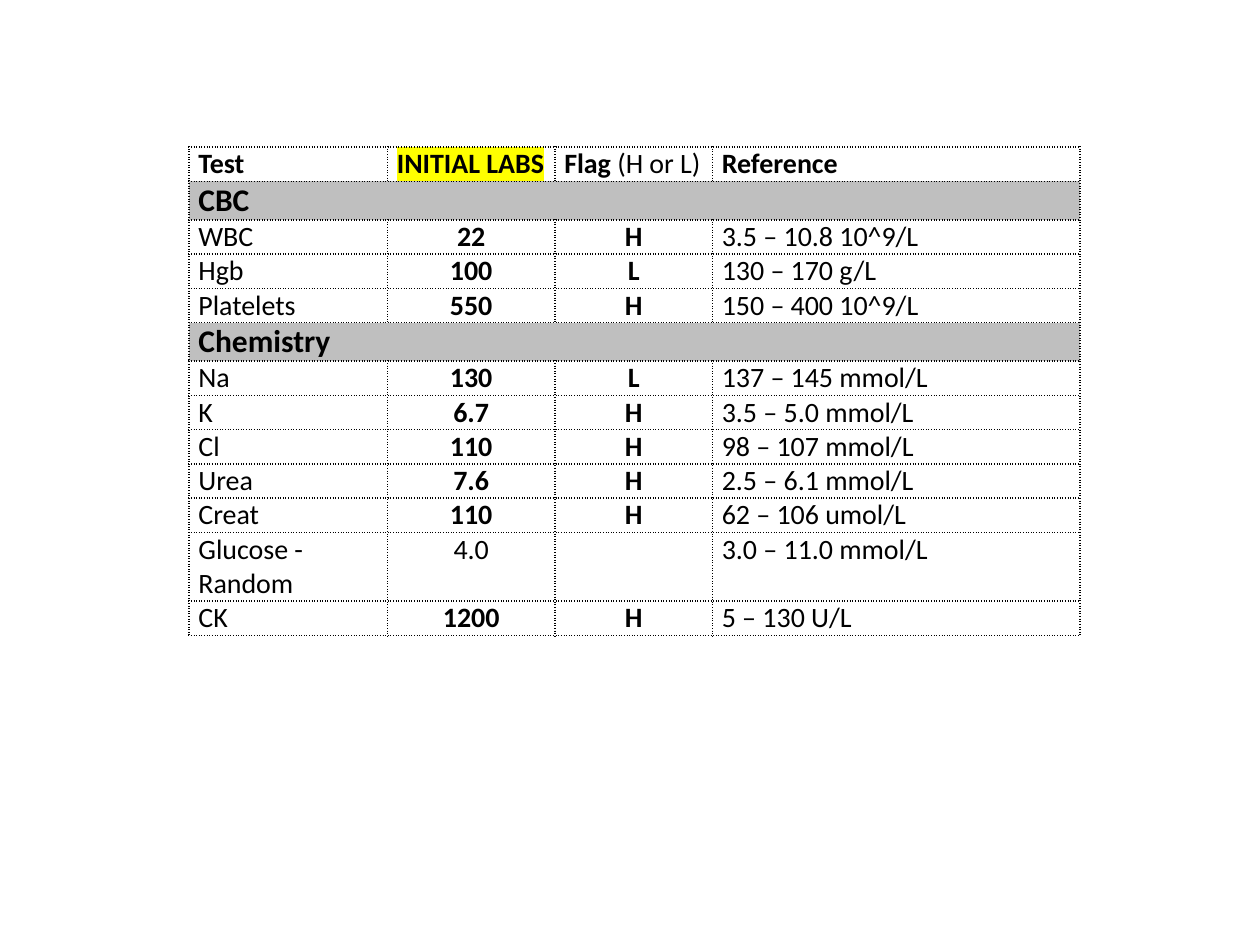
"""Build a one-slide deck with a table of initial laboratory results."""
from dataclasses import dataclass

import lxml.etree
import pptx
import pptx.dml.color
import pptx.enum.text
import pptx.oxml.ns
import pptx.util

Pt = pptx.util.Pt
RGBColor = pptx.dml.color.RGBColor
ALIGN = pptx.enum.text.PP_ALIGN
qn = pptx.oxml.ns.qn

BLACK = RGBColor(0x00, 0x00, 0x00)
WHITE = RGBColor(0xFF, 0xFF, 0xFF)
GREY = RGBColor(0xBF, 0xBF, 0xBF)
YELLOW = RGBColor(0xFF, 0xFF, 0x00)

FONT = "Calibri"
LEFT, TOP = 108, 84
COLUMN_WIDTHS = (113.4, 95.7, 90, 210)
LINE_HEIGHT, SECTION_HEIGHT = 19.5, 22
BODY_SIZE, SECTION_SIZE = 16, 18


@dataclass
class Span:
    text: str
    bold: bool = False
    size: float = BODY_SIZE
    highlight: RGBColor | None = None


@dataclass
class Result:
    test: str
    value: str
    flag: str
    reference: str
    lines: int = 1


@dataclass
class Section:
    title: str
    results: list[Result]


HEADER = [
    [Span("Test", True)],
    [Span("INITIAL LABS", True, highlight=YELLOW)],
    [Span("Flag ", True), Span("(H or L)")],
    [Span("Reference", True)],
]

SECTIONS = [
    Section("CBC", [
        Result("WBC", "22", "H", "3.5 – 10.8 10^9/L"),
        Result("Hgb", "100", "L", "130 – 170 g/L"),
        Result("Platelets", "550", "H", "150 – 400 10^9/L"),
    ]),
    Section("Chemistry", [
        Result("Na", "130", "L", "137 – 145 mmol/L"),
        Result("K", "6.7", "H", "3.5 – 5.0 mmol/L"),
        Result("Cl", "110", "H", "98 – 107 mmol/L"),
        Result("Urea", "7.6", "H", "2.5 – 6.1 mmol/L"),
        Result("Creat", "110", "H", "62 – 106 umol/L"),
        Result("Glucose - Random", "4.0", "", "3.0 – 11.0 mmol/L", lines=2),
        Result("CK", "1200", "H", "5 – 130 U/L"),
    ]),
]


def add_borders(cell) -> None:
    """Give a cell dotted borders on all four sides."""
    properties = cell._tc.get_or_add_tcPr()
    for index, side in enumerate(("lnL", "lnR", "lnT", "lnB")):
        line = lxml.etree.Element(qn(f"a:{side}"), w=str(Pt(1)))
        fill = lxml.etree.SubElement(line, qn("a:solidFill"))
        lxml.etree.SubElement(fill, qn("a:srgbClr"), val=str(BLACK))
        lxml.etree.SubElement(line, qn("a:prstDash"), val="dot")
        properties.insert(index, line)


def add_highlight(run, color: RGBColor) -> None:
    """Mark a run; the highlight element must precede the typeface."""
    mark = lxml.etree.Element(qn("a:highlight"))
    lxml.etree.SubElement(mark, qn("a:srgbClr"), val=str(color))
    run._r.rPr.find(qn("a:latin")).addprevious(mark)


def fill_cell(cell, spans: list[Span], fill: RGBColor | None = None,
              align=ALIGN.LEFT) -> None:
    """Write the spans into a cell and set its fill, margins and borders."""
    cell.margin_left = cell.margin_right = Pt(5.4)
    cell.margin_top = cell.margin_bottom = Pt(0)
    if fill is None:
        cell.fill.background()
    else:
        cell.fill.solid()
        cell.fill.fore_color.rgb = fill
    add_borders(cell)

    para = cell.text_frame.paragraphs[0]
    para.alignment = align
    para.font.size = Pt(BODY_SIZE)
    for span in spans:
        run = para.add_run()
        run.text = span.text
        run.font.name = FONT
        run.font.size = Pt(span.size)
        run.font.bold = span.bold
        run.font.color.rgb = BLACK
        if span.highlight is not None:
            add_highlight(run, span.highlight)


def fill_section(table, row: int, title: str) -> None:
    """Write a grey heading row that spans every column."""
    table.rows[row].height = Pt(SECTION_HEIGHT)
    last = len(COLUMN_WIDTHS) - 1
    table.cell(row, 0).merge(table.cell(row, last))
    for column in range(last + 1):
        spans = [Span(title, True, SECTION_SIZE)] if column == 0 else []
        fill_cell(table.cell(row, column), spans, GREY)


def fill_result(table, row: int, result: Result) -> None:
    """Write one test; flagged values are bold."""
    table.rows[row].height = Pt(LINE_HEIGHT * result.lines)
    flagged = bool(result.flag)
    fill_cell(table.cell(row, 0), [Span(result.test)])
    fill_cell(table.cell(row, 1), [Span(result.value, flagged)],
              align=ALIGN.CENTER)
    flag_spans = [Span(result.flag, True)] if flagged else []
    fill_cell(table.cell(row, 2), flag_spans, align=ALIGN.CENTER)
    fill_cell(table.cell(row, 3), [Span(result.reference)])


def add_lab_table(page) -> None:
    """Add the table: a header, then each section with its results."""
    row_count = 1 + sum(1 + len(section.results) for section in SECTIONS)
    frame = page.shapes.add_table(
        row_count, len(COLUMN_WIDTHS), Pt(LEFT), Pt(TOP),
        Pt(sum(COLUMN_WIDTHS)), Pt(row_count * LINE_HEIGHT))
    table = frame.table
    table.first_row = table.horz_banding = False
    for column, width in zip(table.columns, COLUMN_WIDTHS):
        column.width = Pt(width)

    # Header
    table.rows[0].height = Pt(LINE_HEIGHT)
    for column, spans in enumerate(HEADER):
        fill_cell(table.cell(0, column), spans, WHITE)

    # Sections and their results
    row = 1
    for section in SECTIONS:
        fill_section(table, row, section.title)
        for row, result in enumerate(section.results, row + 1):
            fill_result(table, row, result)
        row += 1


def main() -> None:
    deck = pptx.Presentation()
    deck.slide_width, deck.slide_height = Pt(720), Pt(540)
    page = deck.slides.add_slide(deck.slide_layouts[6])
    add_lab_table(page)
    deck.save("out.pptx")


if __name__ == "__main__":
    main()
